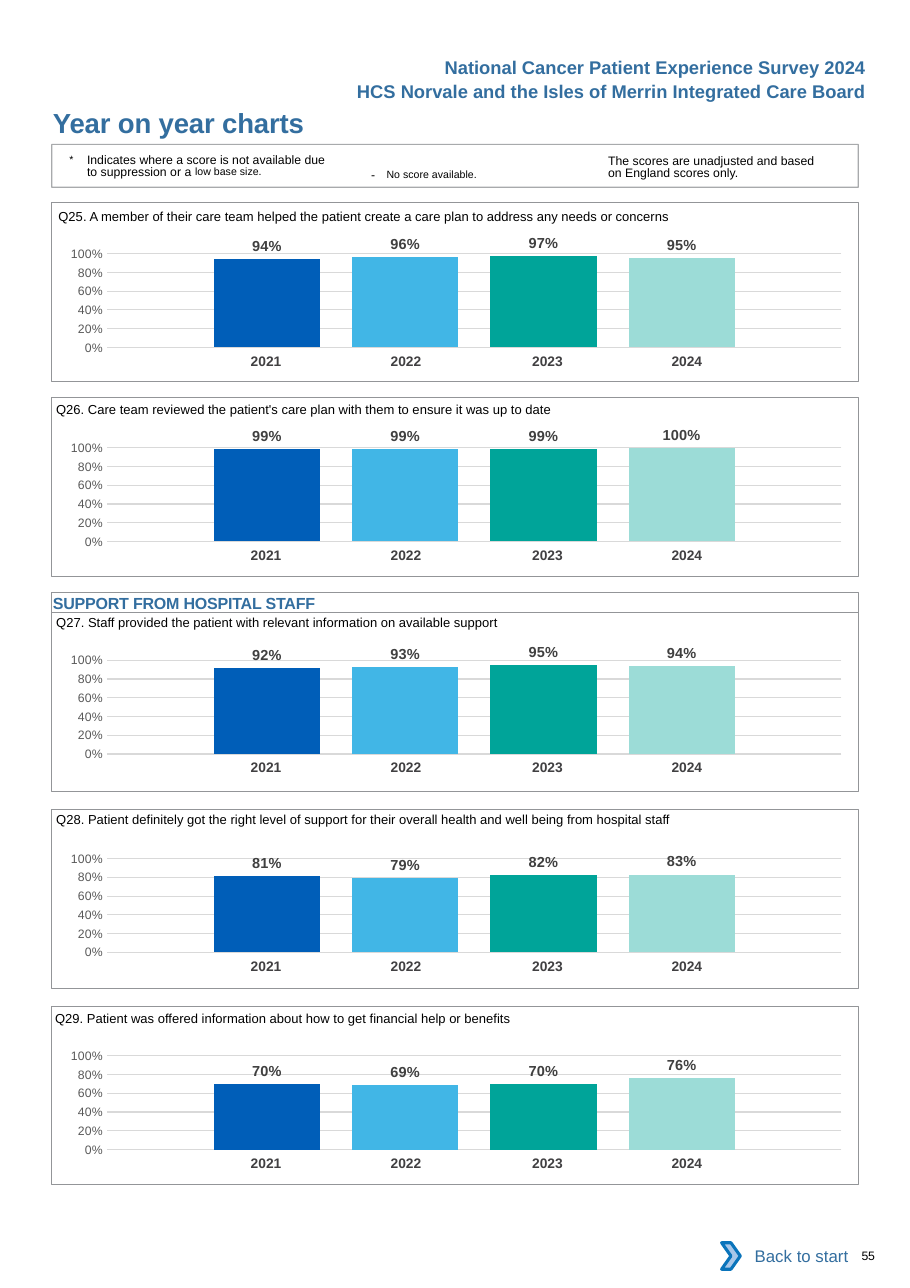
from dataclasses import dataclass

import lxml.etree
import pptx
import pptx.chart.data
import pptx.dml.color
import pptx.enum.chart
import pptx.enum.shapes
import pptx.enum.text
import pptx.oxml
import pptx.oxml.ns
import pptx.util

WIDE, HIGH = 826, 1169
CELL = pptx.util.Inches(0.01)
LEFT, SPAN, TALL = 47, 732, 162
BLUE, GREY, INK = "336E9F", "939598", "000000"
YEARS = ("2021", "2022", "2023", "2024")
TINTS = ("005EB8", "41B6E6", "00A499", "9CDCD7")
ALIGN = pptx.enum.text.PP_ALIGN
FORM = pptx.enum.shapes.MSO_SHAPE


@dataclass(frozen=True)
class Box:
    left: float
    top: float
    wide: float
    high: float

    def place(self) -> tuple[int, ...]:
        return tuple(round(n * CELL) for n in (self.left, self.top, self.wide, self.high))


@dataclass(frozen=True)
class Run:
    text: str
    size: float = 8
    tint: str = INK
    bold: bool = False
    space: float = 0
    raised: int = 0


@dataclass(frozen=True)
class Panel:
    top: int
    chart: int
    label: Box
    quest: str
    rates: tuple[int, ...]


PANELS = (
    Panel(184, 211, Box(53, 180, 631, 46),
          "Q25. A member of their care team helped the patient create a care plan to address any needs or concerns",
          (94, 96, 97, 95)),
    Panel(361, 387, Box(51, 355, 473, 24),
          "Q26. Care team reviewed the patient's care plan with them to ensure it was up to date",
          (99, 99, 99, 100)),
    Panel(556, 580, Box(51, 549, 528, 42),
          "Q27. Staff provided the patient with relevant information on available support",
          (92, 93, 95, 94)),
    Panel(735, 760, Box(51, 728, 732, 24),
          "Q28. Patient definitely got the right level of support for their overall health and well being from hospital staff",
          (81, 79, 82, 83)),
    Panel(913, 939, Box(50, 908, 443, 24),
          "Q29. Patient was offered information about how to get financial help or benefits",
          (70, 69, 70, 76)),
)


def shade(tint: str) -> pptx.dml.color.RGBColor:
    return pptx.dml.color.RGBColor.from_string(tint)


def style(font, size: float, tint: str, bold: bool = False) -> None:
    font.name = "Arial"
    font.size = pptx.util.Pt(size)
    font.bold = bold
    font.color.rgb = shade(tint)


def write(frame, lines, pad=(0, 0, 0, 0), align=ALIGN.LEFT,
          anchor=pptx.enum.text.MSO_ANCHOR.TOP):
    frame.word_wrap = True
    frame.auto_size = pptx.enum.text.MSO_AUTO_SIZE.NONE
    frame.vertical_anchor = anchor
    frame.margin_left, frame.margin_top, frame.margin_right, frame.margin_bottom = (
        round(n * CELL) for n in pad)
    para = frame.paragraphs[0]
    para.alignment = align
    for n, line in enumerate(lines):
        if n:
            para.add_line_break()
        for part in line:
            run = para.add_run()
            run.text = part.text
            style(run.font, part.size, part.tint, part.bold)
            props = run._r.get_or_add_rPr()
            if part.space:
                props.set("spc", str(round(part.space * 100)))
            if part.raised:
                props.set("baseline", str(part.raised * 1000))
    return para


def add_text(slide, box: Box, lines, **look):
    return write(slide.shapes.add_textbox(*box.place()).text_frame, lines, **look)


def add_form(slide, box: Box, form=FORM.RECTANGLE, fill: str = "",
             line: str = "", width: float = 0.5):
    shape = slide.shapes.add_shape(form, *box.place())
    shape.shadow.inherit = False
    if fill:
        shape.fill.solid()
        shape.fill.fore_color.rgb = shade(fill)
    else:
        shape.fill.background()
    if line:
        shape.line.color.rgb = shade(line)
        shape.line.width = pptx.util.Pt(width)
    else:
        shape.line.fill.background()
    return shape


def add_years(slide, top: int) -> None:
    table = slide.shapes.add_table(1, 4, *Box(173, top, 515, 27).place()).table
    table.first_row = table.horz_banding = False
    for n, (year, wide, right) in enumerate(zip(YEARS, (127, 127, 134, 127), (0, 0, 4, 12))):
        table.columns[n].width = wide * CELL
        cell = table.cell(0, n)
        cell.fill.background()
        cell.margin_left, cell.margin_right = 10 * CELL, right * CELL
        cell.margin_top = cell.margin_bottom = 5 * CELL
        para = cell.text_frame.paragraphs[0]
        para.alignment = ALIGN.CENTER
        run = para.add_run()
        run.text = year
        style(run.font, 9, "414042", True)


def add_bars(slide, top: int, rates: tuple[int, ...]) -> None:
    data = pptx.chart.data.CategoryChartData(number_format="0%")
    data.categories = ["1"]
    for n, rate in enumerate(rates, 1):
        data.add_series(f"Series {n}", [rate / 100])
    kind = pptx.enum.chart.XL_CHART_TYPE.COLUMN_CLUSTERED
    chart = slide.shapes.add_chart(kind, *Box(39, top, SPAN, 129).place(), data).chart
    chart.has_legend = chart.has_title = False
    chart.font.name, chart.font.size = "Calibri", pptx.util.Pt(10)
    chart.font.color.rgb = shade(INK)
    chart.category_axis.visible = False
    axis = chart.value_axis
    axis.minimum_scale, axis.maximum_scale, axis.major_unit = 0, 1, 0.2
    axis.major_tick_mark = axis.minor_tick_mark = pptx.enum.chart.XL_TICK_MARK.NONE
    axis.format.line.fill.background()
    grid = axis.major_gridlines.format.line
    grid.color.rgb, grid.width = shade("D9D9D9"), pptx.util.Pt(0.75)
    axis.tick_labels.number_format = "0%"
    axis.tick_labels.number_format_is_linked = False
    style(axis.tick_labels.font, 8, "595959")
    plot = chart.plots[0]
    plot.gap_width, plot.overlap, plot.vary_by_categories = 200, -30, False
    for bars, tint in zip(plot.series, TINTS):
        bars.format.fill.solid()
        bars.format.fill.fore_color.rgb = shade(tint)
        marks = bars.data_labels
        marks.show_value = True
        marks.position = pptx.enum.chart.XL_LABEL_POSITION.OUTSIDE_END
        marks.number_format, marks.number_format_is_linked = "0%", False
        style(marks.font, 9.5, "404040", True)
    area = chart._chartSpace.chart.plotArea
    for old in area.findall(pptx.oxml.ns.qn("c:layout")):
        area.remove(old)
    shares = (("layoutTarget", "inner"), ("xMode", "edge"), ("yMode", "edge"),
              ("x", 0.08), ("y", 0.15), ("w", 0.91), ("h", 0.66))
    inner = "".join(f'<c:{tag} val="{val}"/>' for tag, val in shares)
    area.insert(0, pptx.oxml.parse_xml(
        f'<c:layout {pptx.oxml.ns.nsdecls("c")}><c:manualLayout>{inner}</c:manualLayout></c:layout>'))


def add_notes(slide) -> None:
    tight = pptx.util.Pt(8.1)
    para = add_text(slide, Box(552, 138, 201, 27), (
        (Run("The scores are unadjusted and based"),), (Run("on England scores only."),)), pad=(0, 3, 0, 0))
    para.line_spacing = tight
    add_text(slide, Box(327, 141, 183, 24), ((
        Run("- ", space=2.6), Run("No score available.", 12, raised=3)),), pad=(10, 5, 10, 5))
    para = add_text(slide, Box(63, 138, 272, 27), (
        (Run("*\t", 12, raised=3), Run("Indicates where a score is not available due")),
        (Run("to suppression or a "), Run("low base size.", 12, raised=7))), pad=(0, 3, 0, 0))
    para.line_spacing = tight
    props = para._p.get_or_add_pPr()
    props.set("marL", str(16 * CELL))
    props.set("indent", str(-16 * CELL))
    frame = add_form(slide, Box(LEFT, 131, SPAN, 39), line=GREY, width=0.75)
    tint = frame._element.xpath(".//a:ln//a:srgbClr")[0]
    lxml.etree.SubElement(tint, pptx.oxml.ns.qn("a:alpha")).set("val", "80000")


def main() -> None:
    deck = pptx.Presentation()
    deck.slide_width, deck.slide_height = WIDE * CELL, HIGH * CELL
    slide = deck.slides.add_slide(deck.slide_layouts[5])
    title = slide.shapes.title
    title.left, title.top, title.width, title.height = Box(48, 96, 450, 30).place()
    write(title.text_frame, ((Run("Year on year charts", 18, BLUE, True, -0.1),),))
    add_text(slide, Box(782, 1133, 41, 13), ((Run("55", space=-0.2),),))
    for panel in PANELS:
        add_years(slide, panel.chart + 105)
        add_bars(slide, panel.chart, panel.rates)
        add_form(slide, Box(LEFT, panel.top, SPAN, TALL), line=GREY)
        add_text(slide, panel.label, ((Run(panel.quest, 8.5),),), pad=(0, 9, 0, 0))
    band = add_form(slide, Box(LEFT, 538, SPAN, 18), line=GREY)
    write(band.text_frame, ((Run("SUPPORT FROM HOSPITAL STAFF", 10.5, BLUE, True, -0.1),),), pad=(1, 1, 0, 0))
    add_notes(slide)
    for box, text in ((Box(307, 68, 489, 30), "HCS Norvale and the Isles of Merrin Integrated Care Board"),
                      (Box(392, 46, 404, 30), "National Cancer Patient Experience Survey 2024")):
        add_text(slide, box, ((Run(text, 12, BLUE, True),),), pad=(10, 5, 10, 5), align=ALIGN.RIGHT)
    back = add_form(slide, Box(662, 1119, 118, 42), fill="FFFFFF")
    write(back.text_frame, ((Run("Back to start", 11, BLUE),),), pad=(10, 5, 10, 5),
          align=ALIGN.RIGHT, anchor=pptx.enum.text.MSO_ANCHOR.MIDDLE)
    add_form(slide, Box(655, 1128, 17, 24), FORM.CHEVRON, "A8C7E9", "0A74BB", 2)
    deck.save("out.pptx")


if __name__ == "__main__":
    main()
